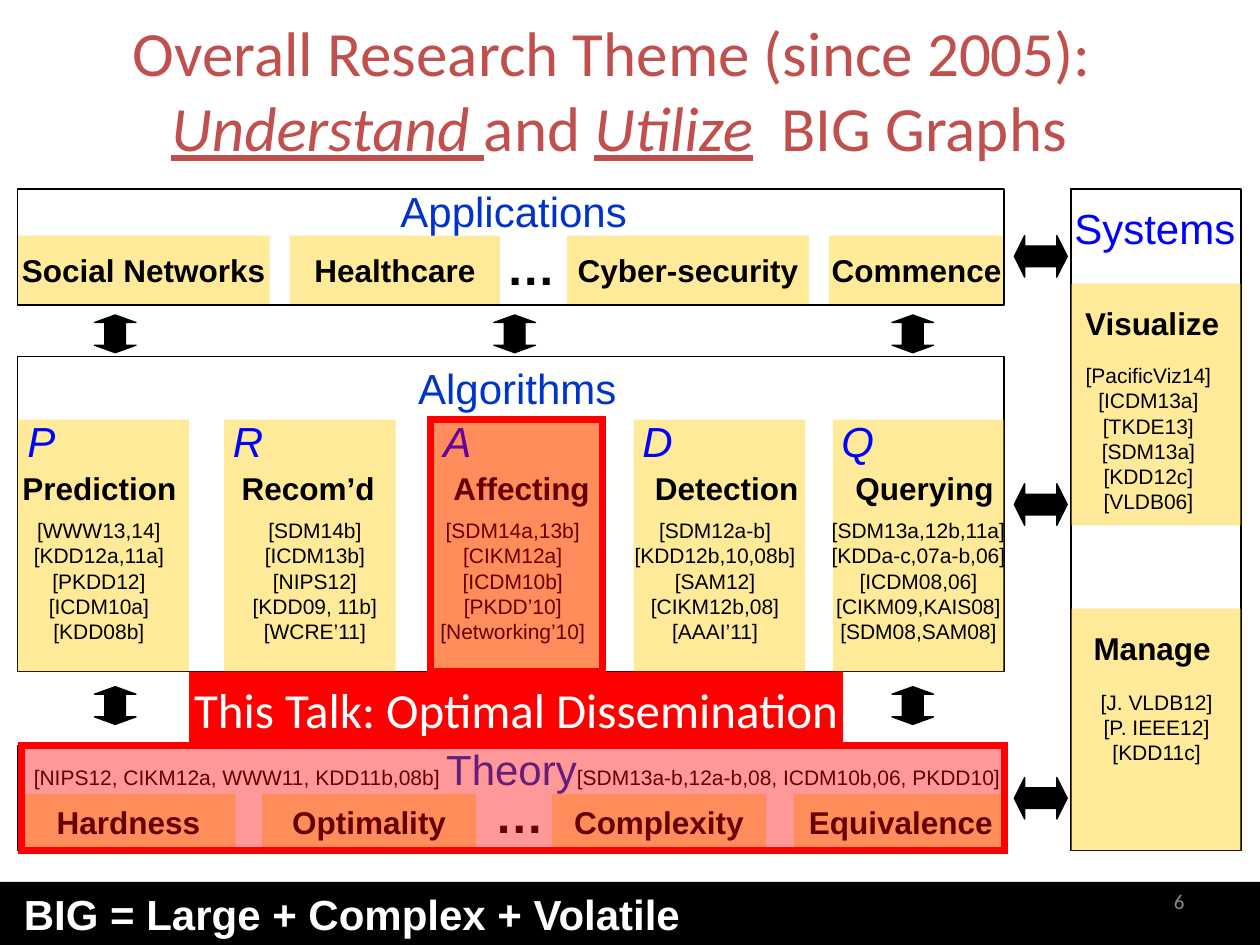
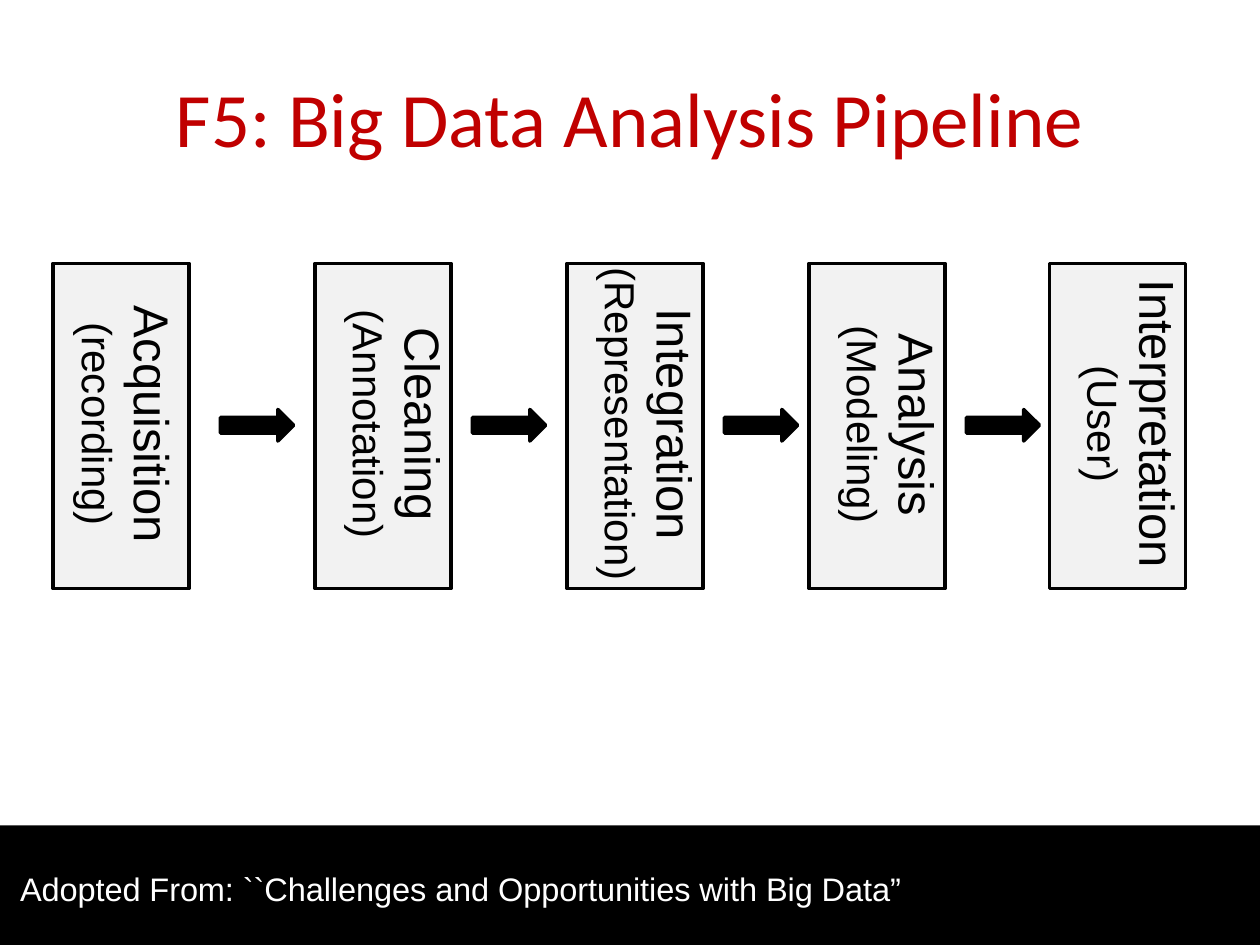
from dataclasses import dataclass
from typing import NamedTuple

from pptx import Presentation
from pptx import util as u
from pptx.dml.color import RGBColor
from pptx.enum import shapes, text
from pptx.oxml import ns
from lxml import etree

Inches = u.Inches
Shape = shapes.MSO_SHAPE
Anchor = text.MSO_ANCHOR
LEFT, CENTER, RIGHT = text.PP_ALIGN.LEFT, text.PP_ALIGN.CENTER, text.PP_ALIGN.RIGHT


class Style(NamedTuple):
    size: float
    color: str
    bold: bool = False
    italic: bool = False
    underline: bool = False
    font: str = "Arial"


class Frame(NamedTuple):
    left: float
    top: float
    width: float
    height: float


class Paint(NamedTuple):
    fill: str | None = None
    opacity: int = 100
    line: str | None = None
    weight: float = 0.75


@dataclass(frozen=True)
class Theme:
    theme_title: Style = Style(36, "C0504D", font="Calibri")
    theme_accent: Style = Style(36, "C0504D", italic=True, underline=True, font="Calibri")
    pipeline_title: Style = Style(44, "C00000", font="Calibri")
    layer: Style = Style(24, "0033CC")
    systems: Style = Style(24, "0000FF")
    letter: Style = Style(24, "0000FF", italic=True)
    name: Style = Style(18, "000000", bold=True)
    dots: Style = Style(28, "000000", bold=True)
    refs: Style = Style(12, "000000")
    banner: Style = Style(28, "FFFFFF", font="Calibri")
    big_footer: Style = Style(24, "FFFFFF", bold=True)
    source_footer: Style = Style(32, "FFFFFF")
    page_number: Style = Style(12, "898989", font="Calibri")
    stage: Style = Style(28, "000000")
    stage_note: Style = Style(24, "000000")
    outline: Paint = Paint(line="000000")
    systems_panel: Paint = Paint("FFFFFF", 40, "000000")
    tile: Paint = Paint("FFCC00", 40)
    highlight: Paint = Paint("FF0000", 40, "FF0000", 4)
    alert: Paint = Paint("FF0000")
    band: Paint = Paint("000000")
    arrow: Paint = Paint("000000", line="000000")
    stage_box: Paint = Paint("F2F2F2", line="000000", weight=2)
    stage_arrow: Paint = Paint("000000", line="000000", weight=2)


THEME = Theme()


class Tile(NamedTuple):
    label: str
    left: float
    width: float


class Algorithm(NamedTuple):
    letter: str
    name: str
    refs: list[str]
    left: float
    letter_left: float
    name_left: float
    name_width: float
    refs_left: float
    refs_width: float


class System(NamedTuple):
    name: str
    top: float
    refs: list[str]
    refs_frame: Frame


class Stage(NamedTuple):
    name: str
    note: str
    left: float
    text_shift: float
    text_height: float


APPLICATIONS = [
    Tile("Social Networks", 0.14, 2), Tile("Healthcare", 2.3, 1.67),
    Tile("Cyber-security", 4.5, 1.92), Tile("Commence", 6.58, 1.39),
]
THEORIES = [
    Tile("Hardness", 0.17, 1.7), Tile("Optimality", 2.08, 1.7),
    Tile("Complexity", 4.38, 1.7), Tile("Equivalence", 6.3, 1.7),
]
ALGORITHMS = [
    Algorithm("P", "Prediction",
              ["[WWW13,14]", "[KDD12a,11a]", "[PKDD12]", "[ICDM10a]", "[KDD08b]"],
              0.14, 0.12, 0.08, 1.44, 0.14, 1.29),
    Algorithm("R", "Recom’d",
              ["[SDM14b]", "[ICDM13b]", "[NIPS12]", "[KDD09, 11b]", "[WCRE’11]"],
              1.78, 1.75, 1.82, 1.27, 1.88, 1.24),
    Algorithm("A", "Affecting",
              ["[SDM14a,13b]", "[CIKM12a]", "[ICDM10b]", "[PKDD’10]", "[Networking’10]"],
              3.42, 3.42, 3.5, 1.3, 3.39, 1.36),
    Algorithm("D", "Detection",
              ["[SDM12a-b]", "[KDD12b,10,08b]", "[SAM12]", "[CIKM12b,08]", "[AAAI’11]"],
              5.03, 5, 5.1, 1.36, 4.93, 1.49),
    Algorithm("Q", "Querying",
              ["[SDM13a,12b,11a]", "[KDDa-c,07a-b,06]", "[ICDM08,06]",
               "[CIKM09,KAIS08]", "[SDM08,SAM08]"],
              6.61, 6.58, 6.69, 1.31, 6.47, 1.64),
]
SYSTEMS = [
    System("Visualize", 2.25,
           ["[PacificViz14]", "[ICDM13a]", "[TKDE13]", "[SDM13a]", "[KDD12c]", "[VLDB06]"],
           Frame(8.51, 2.83, 1.21, 1.31)),
    System("Manage", 4.83, ["[J. VLDB12]", "[P. IEEE12]", "[KDD11c]"],
           Frame(8.63, 5.42, 1.1, 0.71)),
]
STAGES = [
    Stage("Acquisition", "(recording)", 0.42, 0, 2),
    Stage("Cleaning", "(Annotation)", 2.5, 0.07, 1.94),
    Stage("Integration", "(Representation)", 4.5, 0.07, 2.61),
    Stage("Analysis", "(Modeling)", 6.42, 0.07, 1.69),
    Stage("Interpretation", "(User)", 8.33, 0.07, 2.42),
]
STAGE_ARROW_LEFTS = [1.75, 3.75, 5.75, 7.67]


def place(frame: Frame) -> list[u.Length]:
    return [Inches(value) for value in frame]


def format_run(run, style: Style) -> None:
    font = run.font
    font.name, font.size = style.font, u.Pt(style.size)
    font.bold, font.italic, font.underline = style.bold, style.italic, style.underline
    font.color.rgb = RGBColor.from_string(style.color)


def write(text_frame, lines: list[str], styles: list[Style], align) -> None:
    """Fill one paragraph per line; the last style serves any further lines."""
    text_frame.text = "\n".join(lines)
    for index, para in enumerate(text_frame.paragraphs):
        para.alignment = align
        for run in para.runs:
            format_run(run, styles[min(index, len(styles) - 1)])


def add_spans(para, spans: list[tuple[str, Style]]) -> None:
    for words, style in spans:
        span = para.add_run()
        span.text = words
        format_run(span, style)


def add_box(slide, frame: Frame, paint: Paint, kind=Shape.RECTANGLE):
    box = slide.shapes.add_shape(kind, *place(frame))
    box.shadow.inherit = False
    if paint.fill:
        box.fill.solid()
        box.fill.fore_color.rgb = RGBColor.from_string(paint.fill)
        if paint.opacity < 100:
            color = box._element.spPr.find(ns.qn("a:solidFill"))[0]
            etree.SubElement(color, ns.qn("a:alpha"), val=str(paint.opacity * 1000))
    else:
        box.fill.background()
    if paint.line:
        box.line.color.rgb = RGBColor.from_string(paint.line)
        box.line.width = u.Pt(paint.weight)
        if paint is THEME.highlight:
            etree.SubElement(box.line._get_or_add_ln(), ns.qn("a:miter"), lim="800000")
    else:
        box.line.fill.background()
    return box


def add_label(slide, frame: Frame, lines: list[str], *styles: Style, align=LEFT):
    """Add an unwrapped text box that fits its text."""
    label = slide.shapes.add_textbox(*place(frame))
    label.text_frame.word_wrap = False
    label.text_frame.auto_size = text.MSO_AUTO_SIZE.SHAPE_TO_FIT_TEXT
    write(label.text_frame, lines, list(styles), align)
    return label


def add_tile(slide, frame: Frame, name: str):
    tile = add_box(slide, frame, THEME.tile)
    tile.text_frame.word_wrap = False
    write(tile.text_frame, [name], [THEME.name], CENTER)
    return tile


def add_arrows(slide, kind, frames: list[Frame], paint: Paint, head: int = 50) -> None:
    """Add block arrows; head is the head length in percent of the short side."""
    for frame in frames:
        arrow = add_box(slide, frame, paint, kind)
        guides = arrow._element.spPr.find(ns.qn("a:prstGeom")).find(ns.qn("a:avLst"))
        for guide in list(guides):
            guides.remove(guide)
        for name, percent in (("adj1", 50), ("adj2", head)):
            etree.SubElement(guides, ns.qn("a:gd"), name=name, fmla=f"val {percent * 1000}")


def add_footer(slide, top: float, words: str, style: Style, indent: float):
    footer = add_box(slide, Frame(0, top, 10, 7.5 - top), THEME.band)
    footer.text_frame.vertical_anchor = Anchor.TOP
    footer.text_frame.margin_left = Inches(indent)
    write(footer.text_frame, [words], [style], LEFT)
    return footer


def add_page(deck, title_frame: Frame):
    """Add a title-only slide; return it with the title's first paragraph."""
    page = deck.slides.add_slide(deck.slide_layouts[5])
    title = page.shapes.title
    title.left, title.top, title.width, title.height = place(title_frame)
    title.text_frame.auto_size = text.MSO_AUTO_SIZE.NONE
    title.text_frame.vertical_anchor = Anchor.MIDDLE
    para = title.text_frame.paragraphs[0]
    para.alignment = CENTER
    return page, para


def draw_systems(page) -> None:
    add_box(page, Frame(8.5, 1.5, 1.35, 5.25), THEME.systems_panel)
    add_label(page, Frame(8.42, 1.56, 1.49, 0.5), ["Systems"], THEME.systems, align=CENTER)
    for system in SYSTEMS:
        tile = add_tile(page, Frame(8.5, system.top, 1.35, 1.92), system.name)
        tile.text_frame.vertical_anchor = Anchor.TOP
        tile.text_frame.margin_top = tile.text_frame.margin_right = Inches(0.16)
        add_label(page, system.refs_frame, system.refs, THEME.refs, align=CENTER)


def draw_algorithms(page) -> None:
    add_box(page, Frame(0.14, 2.83, 7.83, 2.5), THEME.outline)
    add_label(page, Frame(3.22, 2.83, 1.78, 0.5), ["Algorithms"], THEME.layer)
    for item in ALGORITHMS:
        add_box(page, Frame(item.left, 3.33, 1.36, 2), THEME.tile)
        add_label(page, Frame(item.letter_left, 3.25, 0.44, 0.5), [item.letter], THEME.letter)
        add_label(page, Frame(item.name_left, 3.67, item.name_width, 0.4),
                  [item.name], THEME.name)
        add_label(page, Frame(item.refs_left, 4.06, item.refs_width, 1.11),
                  item.refs, THEME.refs, align=CENTER)
    add_box(page, Frame(3.42, 3.33, 1.36, 2), THEME.highlight)


def draw_tile_row(page, tiles: list[Tile], top: float, height: float, dots: Frame) -> None:
    for tile in tiles:
        add_tile(page, Frame(tile.left, top, tile.width, height), tile.label)
    add_label(page, dots, ["…"], THEME.dots)


def draw_research_theme(deck) -> None:
    page, title = add_page(deck, Frame(0, 0.08, 9.83, 1.25))
    title.text = "Overall Research Theme (since 2005): \v"
    format_run(title.runs[0], THEME.theme_title)
    line_break = title._p.find(ns.qn("a:br"))
    etree.SubElement(line_break, ns.qn("a:rPr"), sz=str(THEME.theme_title.size * 100))
    add_spans(title, [("Understand ", THEME.theme_accent), ("and ", THEME.theme_title),
                      ("Utilize", THEME.theme_accent), ("  BIG Graphs", THEME.theme_title)])

    draw_tile_row(page, APPLICATIONS, 1.87, 0.55, Frame(3.92, 1.83, 0.59, 0.57))
    add_box(page, Frame(0.14, 1.5, 7.83, 0.92), THEME.outline)
    add_label(page, Frame(3.08, 1.42, 2, 0.5), ["Applications"], THEME.layer)
    draw_algorithms(page)
    draw_systems(page)

    add_box(page, Frame(0.14, 5.92, 7.83, 0.83), THEME.outline)
    theory = add_label(page, Frame(0.17, 5.85, 7.94, 0.5), [""], THEME.refs)
    add_spans(theory.text_frame.paragraphs[0], [
        ("[NIPS12, CIKM12a, WWW11, KDD11b,08b] ", THEME.refs), ("Theory", THEME.layer),
        ("[SDM13a-b,12a-b,08, ICDM10b,06, PKDD10]", THEME.refs)])
    draw_tile_row(page, THEORIES, 6.3, 0.45, Frame(3.83, 6.18, 0.59, 0.57))
    add_box(page, Frame(0.17, 5.92, 7.8, 0.83), THEME.highlight)

    links = [(0.75, 2.5), (3.92, 2.5), (7.08, 2.5), (0.75, 5.45), (7.08, 5.45)]
    add_arrows(page, Shape.UP_DOWN_ARROW,
               [Frame(left, top, 0.33, 0.3) for left, top in links], THEME.arrow, 20)
    add_arrows(page, Shape.LEFT_RIGHT_ARROW,
               [Frame(8.05, top, 0.42, 0.33) for top in (1.87, 3.84, 6.17)], THEME.arrow, 25)

    banner = add_box(page, Frame(1.5, 5.33, 5.19, 0.6), THEME.alert)
    banner.text_frame.margin_left = banner.text_frame.margin_right = 0
    write(banner.text_frame, ["This Talk: Optimal Dissemination"], [THEME.banner], CENTER)
    add_footer(page, 7, "BIG = Large + Complex + Volatile", THEME.big_footer, 0.19)
    number = page.shapes.add_textbox(*place(Frame(7.17, 6.95, 2.33, 0.4)))
    number.text_frame.vertical_anchor = Anchor.MIDDLE
    number.text_frame.word_wrap = True
    write(number.text_frame, ["6"], [THEME.page_number], RIGHT)


def draw_pipeline(deck) -> None:
    page, title = add_page(deck, Frame(0.5, 0.3, 9, 1.25))
    add_spans(title, [("F5: Big Data Analysis Pipeline", THEME.pipeline_title)])
    for stage in STAGES:
        add_box(page, Frame(stage.left, 2.09, 1.08, 2.58), THEME.stage_box)
        frame = Frame(stage.left + stage.text_shift, 3.33 - stage.text_height / 2,
                      1.08, stage.text_height)
        label = add_label(page, frame, [stage.name, stage.note],
                          THEME.stage, THEME.stage_note, align=CENTER)
        label.text_frame._txBody.bodyPr.set("vert", "eaVert")
    add_arrows(page, Shape.RIGHT_ARROW,
               [Frame(left, 3.25, 0.58, 0.25) for left in STAGE_ARROW_LEFTS], THEME.stage_arrow)
    footer = add_footer(page, 6.55, "Adopted From: ``Challenges and Opportunities with Big Data”",
                        THEME.source_footer, 0.16)
    footer.text_frame.paragraphs[0].runs[0].font._element.set("baseline", "-25000")


def main() -> None:
    deck = Presentation()
    deck.slide_width, deck.slide_height = Inches(10), Inches(7.5)
    draw_research_theme(deck)
    draw_pipeline(deck)
    deck.save("out.pptx")


if __name__ == "__main__":
    main()
